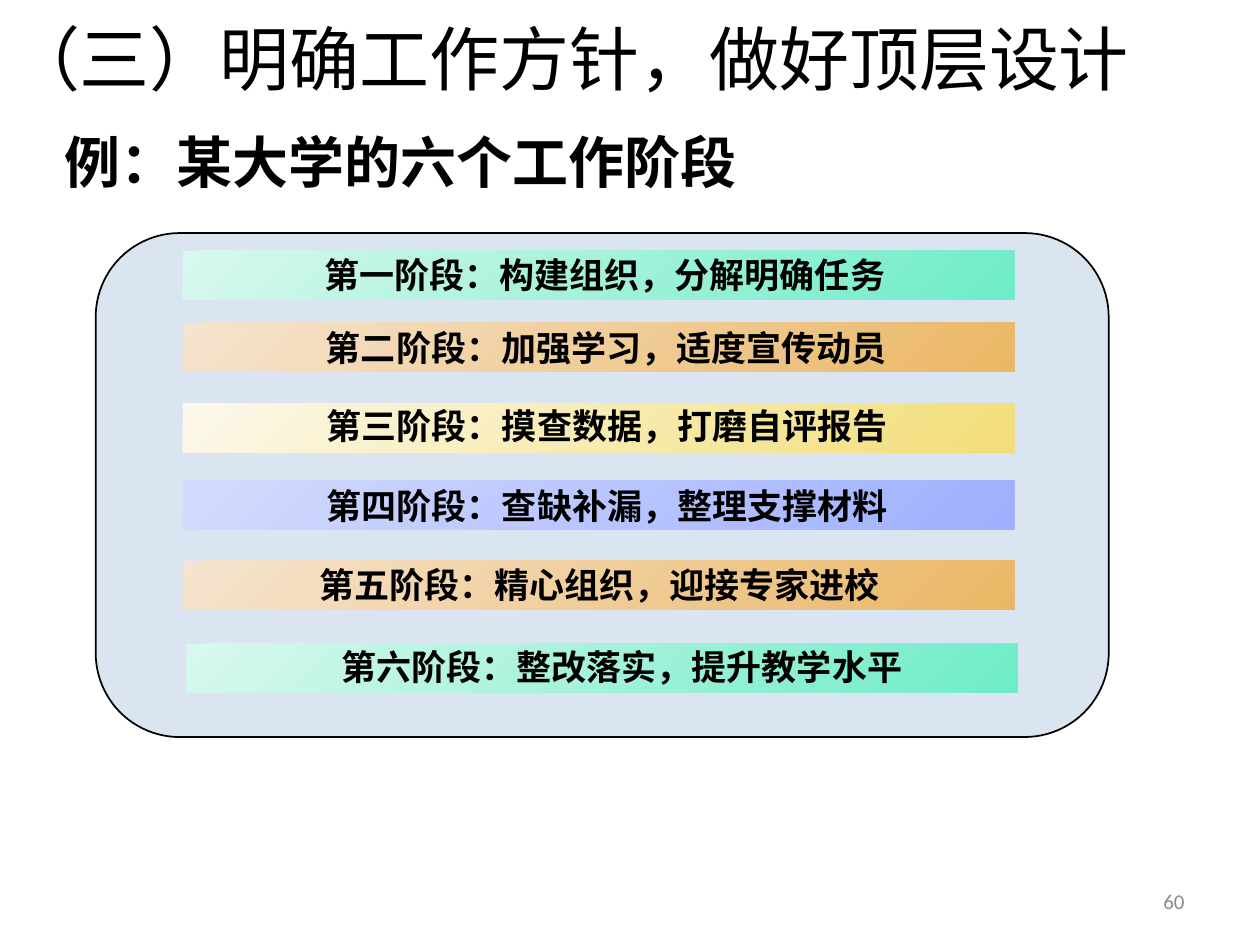
from lxml import etree
from pptx import Presentation
from pptx import util as u
from pptx.dml.color import RGBColor
from pptx.enum import shapes, text
from pptx.oxml import ns

COLORS = {
    "ink": "000000", "panel": "4F81BD", "number": "8C8C8C", "shadow": "808080",
    "mint": ("D9F8ED", "6EECC8"), "orange": ("F6E4D0", "EAB764"),
    "yellow": ("FCF8EB", "F2DE78"), "blue": ("D4DBFE", "9EB0FE"),
}
HAN_FONT = "Noto Sans CJK SC"

# wording, colour, bar (left, top), label (left, top, width), right inset
STAGES = [
    ("第一阶段：构建组织，分解明确任务", "mint", (14.5, 19.9), (19.7, 19.6, 58.5), 2.9),
    ("第二阶段：加强学习，适度宣传动员", "orange", (14.5, 25.6), (19.6, 25.4, 59), 2.9),
    ("第三阶段：摸查数据，打磨自评报告", "yellow", (14.5, 32), (19.9, 31.6, 58.5), 2.9),
    ("第四阶段：查缺补漏，整理支撑材料", "blue", (14.5, 38.1), (19.9, 38, 58.5), 2.9),
    ("第五阶段：精心组织，迎接专家进校", "orange", (14.5, 44.5), (19, 44.2, 60.4), 4.2),
    ("第六阶段：整改落实，提升教学水平", "mint", (14.8, 51.1), (20.1, 50.7, 58.5), 1),
]


def rgb(name):
    return RGBColor.from_string(COLORS[name])


class SlideBuilder:
    """Places elements on a grid of 100 columns by 75 rows."""

    def __init__(self, deck):
        self.cell = deck.slide_width / 100
        self.page = deck.slides.add_slide(deck.slide_layouts[5])

    def grid(self, *cells):
        return [u.Emu(round(cell * self.cell)) for cell in cells]

    def add_words(self, box, words, size, font, color="ink", bold=False,
                  align=text.PP_ALIGN.CENTER, anchor=text.MSO_ANCHOR.TOP, right=1):
        frame = box.text_frame
        frame.word_wrap = True
        frame.auto_size = text.MSO_AUTO_SIZE.NONE
        frame.vertical_anchor = anchor
        frame.margin_right = self.grid(right)[0]
        para = frame.paragraphs[0]
        para.alignment = align
        span = para.add_run()
        span.text = words
        span.font.size = u.Pt(size)
        span.font.bold = bold
        span.font.color.rgb = rgb(color)
        span.font.name = font
        props = span._r.get_or_add_rPr()
        etree.SubElement(props, ns.qn("a:ea"), typeface=HAN_FONT)
        return props

    def title(self, at, words):
        box = self.page.shapes.title
        box.left, box.top, box.width, box.height = self.grid(*at)
        props = self.add_words(box, words, 40, "Calibri", anchor=text.MSO_ANCHOR.MIDDLE)
        # Text shadow sits between the fill and the font names
        effects = etree.Element(ns.qn("a:effectLst"))
        shadow = etree.SubElement(effects, ns.qn("a:outerShdw"), blurRad="38100",
                                  dist="38100", dir="2700000", algn="tl")
        etree.SubElement(shadow, ns.qn("a:srgbClr"), val=COLORS["shadow"])
        props.find(ns.qn("a:latin")).addprevious(effects)

    def label(self, at, words, size, font, **style):
        box = self.page.shapes.add_textbox(*self.grid(*at))
        self.add_words(box, words, size, font, **style)

    def panel(self, at):
        box = self.page.shapes.add_shape(
            shapes.MSO_SHAPE.ROUNDED_RECTANGLE, *self.grid(*at))
        box.shadow.inherit = False
        box.fill.solid()
        box.fill.fore_color.rgb = rgb("panel")
        color = box._element.spPr.find(".//" + ns.qn("a:srgbClr"))
        etree.SubElement(color, ns.qn("a:alpha"), val="20000")
        box.line.color.rgb = rgb("ink")
        box.line.width = u.Pt(1)

    def bar(self, at, color):
        box = self.page.shapes.add_shape(shapes.MSO_SHAPE.RECTANGLE, *self.grid(*at))
        box.shadow.inherit = False
        box.line.fill.background()
        box.fill.gradient()
        box.fill.gradient_angle = 315
        for stop, shade in zip(box.fill.gradient_stops, COLORS[color]):
            stop.color.rgb = RGBColor.from_string(shade)


def main():
    deck = Presentation()
    deck.slide_width, deck.slide_height = u.Inches(10), u.Inches(7.5)
    slide = SlideBuilder(deck)

    # Headings
    slide.title((-1.9, -2.7, 94.2, 14.5), "（三）明确工作方针，做好顶层设计")
    slide.label((4.1, 9.6, 86.2, 8.4), "例：某大学的六个工作阶段", 32, HAN_FONT,
                bold=True, align=text.PP_ALIGN.LEFT)

    # Six stages on a rounded panel
    slide.panel((7.6, 18.5, 80.4, 40))
    for words, color, bar_at, label_at, right in STAGES:
        slide.bar((*bar_at, 66, 3.9), color)
        slide.label((*label_at, 4.4), words, 20, "Arial", bold=True, right=right)

    # Page number
    slide.label((71.7, 69.5, 23.3, 4), "60", 12, "Calibri", color="number",
                align=text.PP_ALIGN.RIGHT, anchor=text.MSO_ANCHOR.MIDDLE)

    deck.save("out.pptx")


if __name__ == "__main__":
    main()
